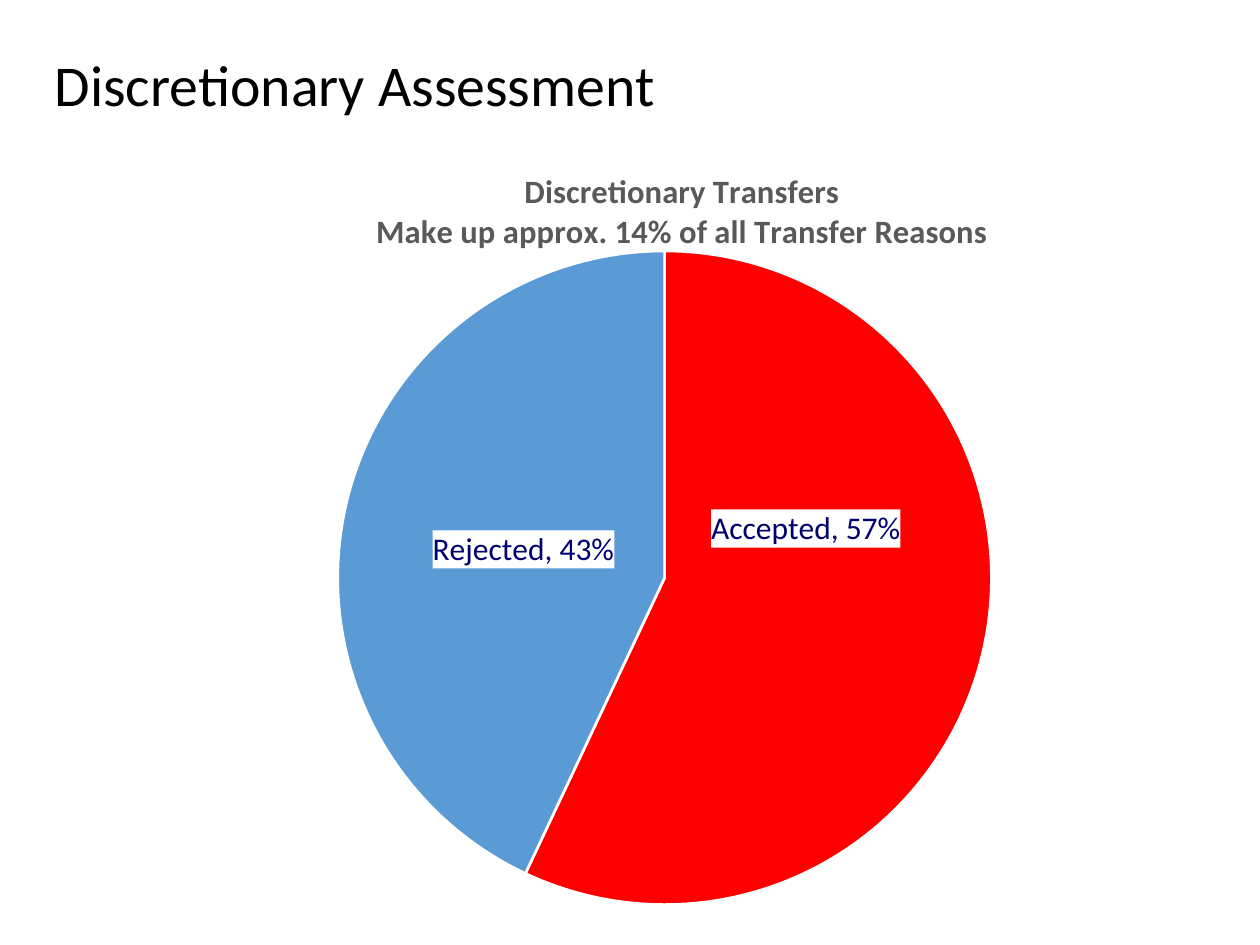
from lxml import etree
from pptx import Presentation, util as u
from pptx.chart.data import CategoryChartData
from pptx.dml.color import RGBColor
from pptx.enum import chart as c, text
from pptx.oxml import parse_xml
from pptx.oxml.ns import nsdecls, qn

PX = u.Inches(1) // 126
FONT = "Calibri"
TITLE = "Discretionary Assessment"
TITLE_BOX = (42, -4, 1086, 183)
CHART_BOX = (131, 116, 1077, 809)
PIE_BOX = (338, 251, 654, 654)
CHART_TITLE_AT = (372, 165)
CHART_TITLE = ["Discretionary Transfers", "Make up approx. 14% of all Transfer Reasons"]
SLICES = [
    ("Accepted", 0.57, "FF0000", (-18, -85)),
    ("Rejected", 0.43, "5B9BD5", (18, 7)),
]


def colour(value):
    return RGBColor.from_string(value)


def style(font, size, value, bold=False):
    font.name, font.size, font.bold = FONT, u.Pt(size), bold
    font.color.rgb = colour(value)


def place(shape, box):
    shape.left, shape.top, shape.width, shape.height = [PX * n for n in box]


def layout(offset, size=None, edge=False):
    parts = [("x", offset[0] / CHART_BOX[2]), ("y", offset[1] / CHART_BOX[3])]
    modes = '<c:xMode val="edge"/><c:yMode val="edge"/>' if edge else ""
    if size:
        parts += [("w", size[0] / CHART_BOX[2]), ("h", size[1] / CHART_BOX[3])]
    target = '<c:layoutTarget val="inner"/>' if size else ""
    values = "".join(f'<c:{tag} val="{value:.3f}"/>' for tag, value in parts)
    return parse_xml(f'<c:layout {nsdecls("c")}><c:manualLayout>{target}{modes}{values}'
                     '</c:manualLayout></c:layout>')


def inside_chart(x, y):
    return x - CHART_BOX[0], y - CHART_BOX[1]


def label_xml(index, offset):
    return parse_xml(f'''<c:dLbl {nsdecls("c", "a")}><c:idx val="{index}"/>
        {etree.tostring(layout(offset), encoding="unicode")}
        <c:numFmt formatCode="0%" sourceLinked="0"/>
        <c:spPr><a:solidFill><a:srgbClr val="FFFFFF"/></a:solidFill></c:spPr>
        <c:txPr><a:bodyPr/><a:p><a:pPr><a:defRPr sz="1800" b="0">
        <a:solidFill><a:srgbClr val="00006E"/></a:solidFill><a:latin typeface="{FONT}"/>
        </a:defRPr></a:pPr><a:endParaRPr lang="en-US"/></a:p></c:txPr>
        <c:dLblPos val="ctr"/><c:showLegendKey val="0"/><c:showVal val="1"/>
        <c:showCatName val="1"/><c:showSerName val="0"/><c:showPercent val="0"/>
        <c:showBubbleSize val="0"/><c:separator>, </c:separator></c:dLbl>''')


def add_title(page):
    title = page.shapes.title
    place(title, TITLE_BOX)
    frame = title.text_frame
    frame.word_wrap = True
    frame.vertical_anchor = text.MSO_ANCHOR.MIDDLE
    para = frame.paragraphs[0]
    para.alignment = text.PP_ALIGN.LEFT
    para.line_spacing = 0.9
    span = para.add_run()
    span.text = TITLE
    style(span.font, 33, "000000")


def add_pie(page):
    data = CategoryChartData(number_format="0%")
    data.categories = [name for name, *_ in SLICES]
    data.add_series("Series 1", [value for _, value, *_ in SLICES])
    box = [PX * n for n in CHART_BOX]
    chart = page.shapes.add_chart(c.XL_CHART_TYPE.PIE, *box, data).chart
    chart.has_legend = False
    style(chart.font, 10, "000000")

    chart.has_title = True
    heading = chart.chart_title
    frame = heading.text_frame
    for number, line in enumerate(CHART_TITLE):
        para = frame.add_paragraph() if number else frame.paragraphs[0]
        para.alignment = text.PP_ALIGN.CENTER
        span = para.add_run()
        span.text = line
        style(span.font, 18.6, "595959", True)
    element = heading._element
    for old in element.findall(qn("c:layout")):
        element.remove(old)
    element.find(qn("c:tx")).addnext(layout(inside_chart(*CHART_TITLE_AT), edge=True))

    area = chart._chartSpace.find(qn("c:chart")).find(qn("c:plotArea"))
    for old in area.findall(qn("c:layout")):
        area.remove(old)
    area.insert(0, layout(inside_chart(*PIE_BOX[:2]), PIE_BOX[2:], True))

    plot = chart.plots[0]
    plot.vary_by_categories = True
    series = plot.series[0]
    labels = series.data_labels
    labels.show_value = labels.show_category_name = True
    labels.number_format, labels.number_format_is_linked = "0%", False
    style(labels.font, 18, "00006E")
    for index, (_, _, fill, offset) in enumerate(SLICES):
        shape = series.points[index].format
        shape.fill.solid()
        shape.fill.fore_color.rgb = colour(fill)
        shape.line.color.rgb = colour("FFFFFF")
        shape.line.width = u.Pt(1.5)
        labels._element.insert(index, label_xml(index, offset))


def main():
    deck = Presentation()
    deck.slide_width, deck.slide_height = u.Inches(10), u.Inches(7.5)
    page = deck.slides.add_slide(deck.slide_layouts[5])
    add_title(page)
    add_pie(page)
    deck.save("out.pptx")


if __name__ == "__main__":
    main()
